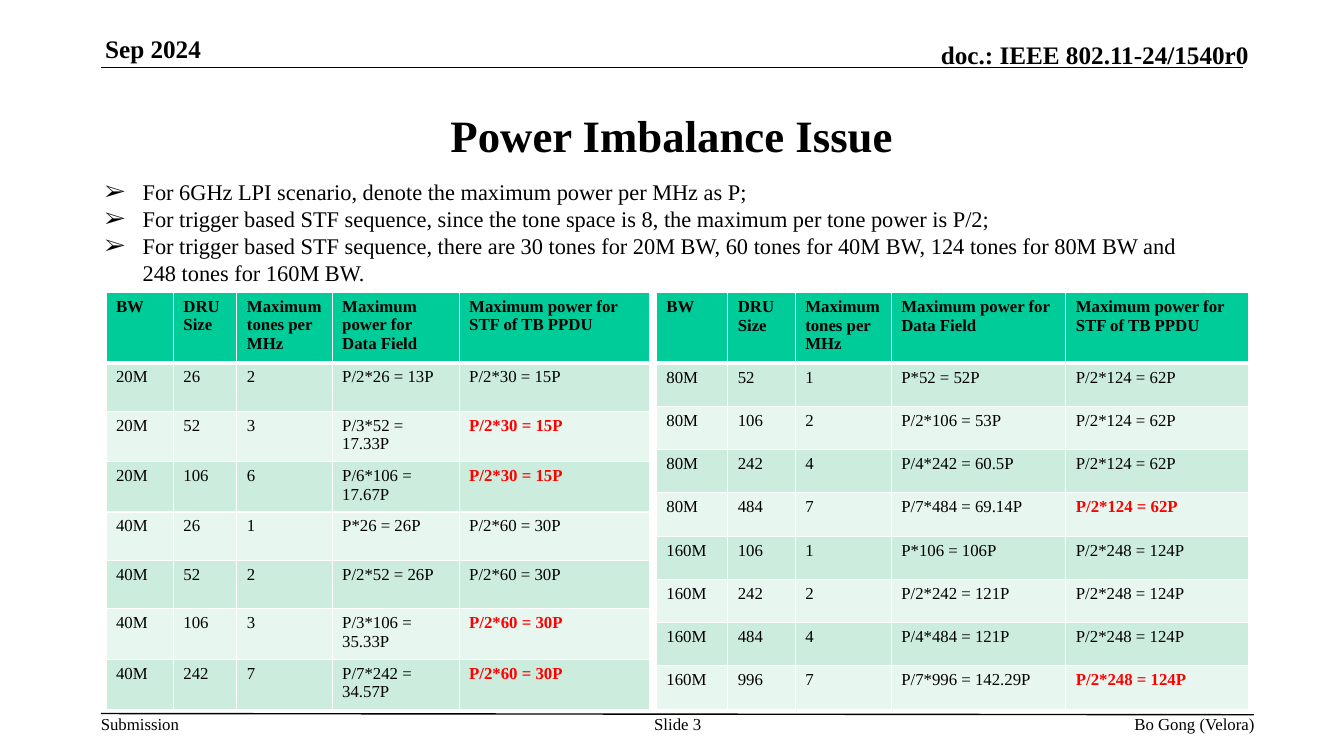
"""Build the slide on the power imbalance issue."""
from lxml import etree
from pptx import Presentation
from pptx import util as u
from pptx.dml.color import RGBColor
from pptx.enum import shapes, text
from pptx.oxml import ns

BLACK = RGBColor(0x00, 0x00, 0x00)
WHITE = RGBColor(0xFF, 0xFF, 0xFF)
RED = RGBColor(0xFF, 0x00, 0x00)
GREEN = RGBColor(0x00, 0xCC, 0x99)
BANDS = [RGBColor(0xCC, 0xEC, 0xDE), RGBColor(0xE7, 0xF6, 0xEF)]
FONT = "Times New Roman"
LEFT, RIGHT = text.PP_ALIGN.LEFT, text.PP_ALIGN.RIGHT
CENTER = text.PP_ALIGN.CENTER


def add_span(para, words, size, bold=False, color=BLACK):
    span = para.add_run()
    span.text = words
    span.font.name = FONT
    span.font.size = u.Pt(size)
    span.font.bold = bold
    span.font.color.rgb = color


def add_element(parent, tag, **attributes):
    return etree.SubElement(parent, ns.qn(tag), **attributes)


deck = Presentation()
deck.slide_width, deck.slide_height = u.Cm(33.87), u.Cm(19.05)
page = deck.slides.add_slide(deck.slide_layouts[1])

for start_x, start_y, end_x, end_y in [
    (2.54, 1.7, 31.32, 1.7),
    (2.54, 17.98, 31.6, 18.01),
]:
    rule = page.shapes.add_connector(
        shapes.MSO_CONNECTOR.STRAIGHT,
        u.Cm(start_x), u.Cm(start_y), u.Cm(end_x), u.Cm(end_y))
    rule.line.color.rgb = BLACK
    rule.line.width = u.Pt(1)
    add_element(rule.element.spPr, "a:effectLst")

for words, left, top, width, height, size, align in [
    ("Sep 2024", 2.65, 0.84, 6.68, 0.76, 18, LEFT),
    ("doc.: IEEE 802.11-24/1540r0", 18.52, 0.99, 12.95, 0.76, 18, RIGHT),
    ("Submission", 2.54, 17.98, 2.2, 0.5, 12, LEFT),
    ("Slide 3", 16.1, 17.98, 1.96, 0.5, 12, CENTER),
    ("Bo Gong (Velora)", 19.84, 17.98, 11.78, 0.5, 12, RIGHT),
]:
    box = page.shapes.add_textbox(u.Cm(left), u.Cm(top), u.Cm(width), u.Cm(height))
    frame = box.text_frame
    frame.word_wrap = True
    frame.margin_left = frame.margin_right = 0
    frame.margin_top = frame.margin_bottom = 0
    if size == 18:
        frame.vertical_anchor = text.MSO_ANCHOR.BOTTOM
    frame.paragraphs[0].alignment = align
    add_span(frame.paragraphs[0], words, size, bold=size == 18)

title = page.shapes.title
title.left, title.top = u.Cm(2.54), u.Cm(1.92)
title.width, title.height = u.Cm(28.78), u.Cm(2.95)
title.text_frame.vertical_anchor = text.MSO_ANCHOR.MIDDLE
title.text_frame.paragraphs[0].alignment = CENTER
add_span(title.text_frame.paragraphs[0], "Power Imbalance Issue", 32, bold=True)

body = page.placeholders[1]
body.left, body.top = u.Cm(2.39), u.Cm(4.37)
body.width, body.height = u.Cm(27.91), u.Cm(3)
body.text_frame.auto_size = text.MSO_AUTO_SIZE.NONE
body.text_frame.vertical_anchor = text.MSO_ANCHOR.TOP
for index, words in enumerate([
    "For 6GHz LPI scenario, denote the maximum power per MHz as P;",
    "For trigger based STF sequence, since the tone space is 8, "
    "the maximum per tone power is P/2;",
    "For trigger based STF sequence, there are 30 tones for 20M BW, 60 tones for "
    "40M BW, 124 tones for 80M BW and 248 tones for 160M BW.",
]):
    frame = body.text_frame
    para = frame.add_paragraph() if index else frame.paragraphs[0]
    settings = para._p.get_or_add_pPr()
    settings.set("marL", str(u.Cm(0.95)))
    settings.set("indent", str(u.Cm(-0.95)))
    add_element(add_element(settings, "a:buClr"), "a:srgbClr", val=str(BLACK))
    add_element(settings, "a:buFont", typeface=FONT)
    add_element(settings, "a:buChar", char="➢")
    para.alignment = LEFT
    para.space_before = u.Pt(0)
    para.line_spacing = 1.0
    add_span(para, words, 16)

HEADINGS = ["BW", "DRU Size", "Maximum tones per MHz",
            "Maximum power for Data Field", "Maximum power for STF of TB PPDU"]
STF_TONES = {20: 30, 40: 60, 80: 124, 160: 248}
HEADER_HEIGHT = 1.74

for left, top, row_height, widths, rows in [
    (2.67, 7.36, 1.22, [1.7, 1.6, 2.4, 3.2, 4.8],
     [(20, 26, 2), (20, 52, 3), (20, 106, 6),
      (40, 26, 1), (40, 52, 2), (40, 106, 3), (40, 242, 7)]),
    (16.54, 7.37, 1.09, [1.8, 1.7, 2.42, 4.4, 4.6],
     [(80, 52, 1), (80, 106, 2), (80, 242, 4), (80, 484, 7),
      (160, 106, 1), (160, 242, 2), (160, 484, 4), (160, 996, 7)]),
]:
    table = page.shapes.add_table(
        len(rows) + 1, len(widths), u.Cm(left), u.Cm(top),
        u.Cm(sum(widths)), u.Cm(HEADER_HEIGHT + row_height * len(rows))).table
    table.horz_banding = False
    for column, width in zip(table.columns, widths):
        column.width = u.Cm(width)

    lines = [(HEADINGS, False)]
    for bandwidth, size, tones in rows:
        data_power = round(size / tones, 2)
        stf_power = STF_TONES[bandwidth] // 2
        share = "P" if tones == 1 else f"P/{tones}"
        lines.append(([f"{bandwidth}M", str(size), str(tones),
                       f"{share}*{size} = {data_power:g}P",
                       f"P/2*{STF_TONES[bandwidth]} = {stf_power}P"],
                      data_power > stf_power))

    for row, (words_in_row, imbalanced) in enumerate(lines):
        table.rows[row].height = u.Cm(row_height if row else HEADER_HEIGHT)
        for column, words in enumerate(words_in_row):
            cell = table.cell(row, column)
            for side in "LRTB":
                thick = (row, side) in [(0, "B"), (1, "T")]
                border = add_element(cell._tc.get_or_add_tcPr(), f"a:ln{side}",
                                     w=str(u.Pt(3 if thick else 1)))
                paint = add_element(border, "a:solidFill")
                add_element(paint, "a:srgbClr", val=str(WHITE))
            cell.fill.solid()
            cell.fill.fore_color.rgb = BANDS[(row - 1) % 2] if row else GREEN
            warning = imbalanced and column == len(widths) - 1
            add_span(cell.text_frame.paragraphs[0], words, 12,
                     bold=row == 0 or warning, color=RED if warning else BLACK)

deck.save("out.pptx")
